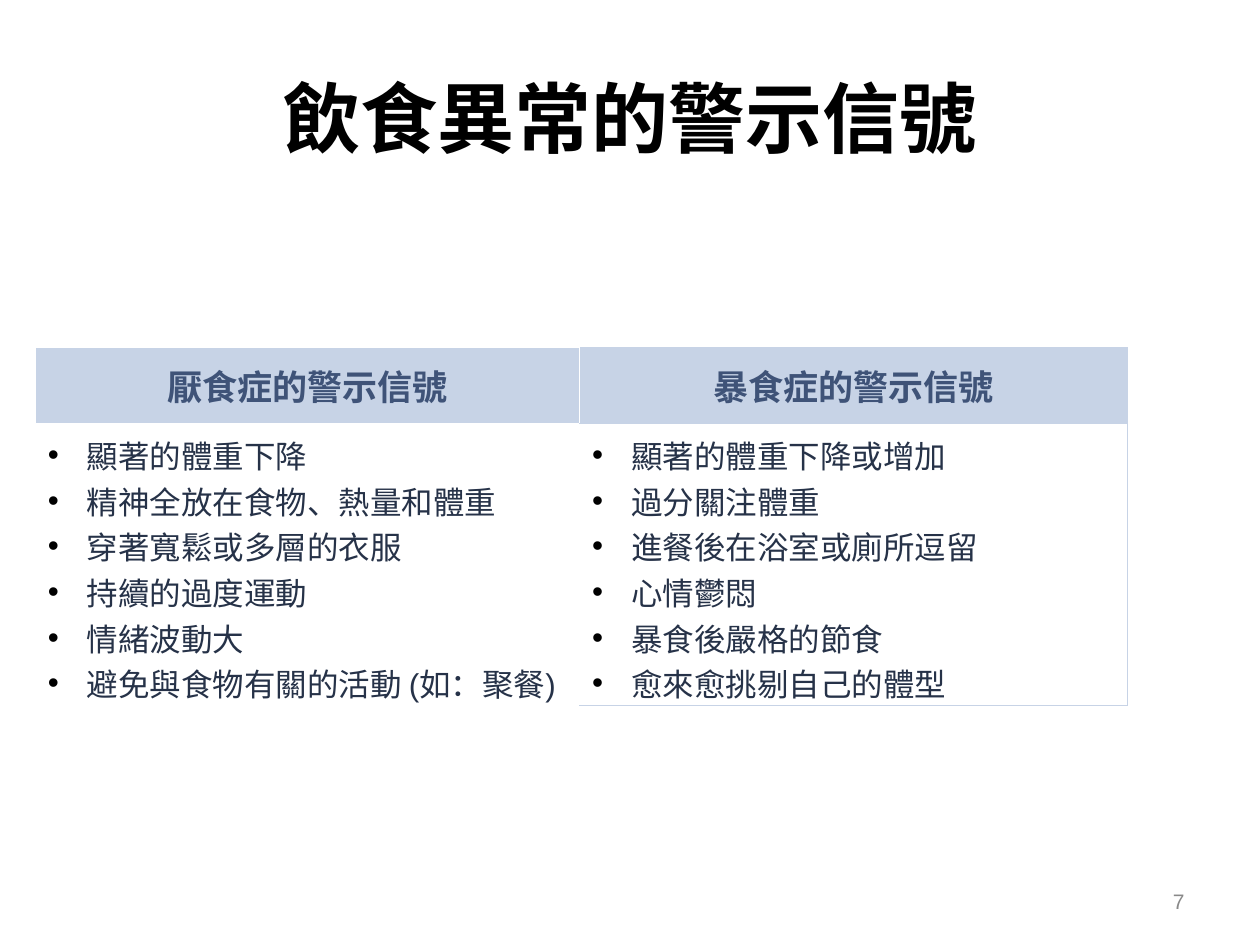
"""Build a slide that compares the warning signs of two eating disorders."""
from lxml.etree import SubElement as Sub
from pptx import Presentation
from pptx.dml.color import RGBColor as RGB
from pptx.enum.text import MSO_ANCHOR as Anchor, PP_ALIGN as Align
from pptx.oxml.ns import qn
from pptx.util import Pt

SCALE = 9144
FONT = "Arial"
HUES = {"black": "000000", "gray": "898989", "white": "FFFFFF",
        "band": "C7D3E6", "head": "3F5378", "body": "263248"}
SIGNS = {
    "厭食症的警示信號": ["顯著的體重下降", "精神全放在食物、熱量和體重", "穿著寬鬆或多層的衣服",
                 "持續的過度運動", "情緒波動大", "避免與食物有關的活動 (如：聚餐)"],
    "暴食症的警示信號": ["顯著的體重下降或增加", "過分關注體重", "進餐後在浴室或廁所逗留",
                 "心情鬱悶", "暴食後嚴格的節食", "愈來愈挑剔自己的體型"],
}


def px(n):
    return n * SCALE


class Deck:
    def __init__(self, wide, high):
        self.prs = Presentation()
        self.prs.slide_width, self.prs.slide_height = px(wide), px(high)
        self.slide = self.prs.slides.add_slide(self.prs.slide_layouts[6])

    def style(self, para, size, hue, bold=False, align=Align.LEFT):
        para.alignment = align
        for run in para.runs:
            font = run.font
            font.name, font.size, font.bold = FONT, Pt(size), bold
            font.color.rgb = RGB.from_string(HUES[hue])

    def text(self, box, words, *look):
        frame = self.slide.shapes.add_textbox(*map(px, box)).text_frame
        frame.word_wrap = True
        frame.vertical_anchor = Anchor.MIDDLE
        frame.text = words
        self.style(frame.paragraphs[0], *look)

    def bullet(self, para):
        props = para._p.get_or_add_pPr()
        props.set("marL", str(px(31)))
        props.set("indent", str(px(-31)))
        Sub(Sub(props, qn("a:buClr")), qn("a:srgbClr"), val=HUES["black"])
        Sub(props, qn("a:buFont"), typeface=FONT)
        Sub(props, qn("a:buChar"), char="•")

    def border(self, cell, hues):
        props = cell._tc.get_or_add_tcPr()
        for spot, (side, hue) in enumerate(zip("LRTB", hues)):
            line = Sub(props, qn("a:ln" + side), w=str(Pt(0.75)))
            Sub(Sub(line, qn("a:solidFill")), qn("a:srgbClr"), val=HUES[hue])
            props.insert(spot, line)

    def cell(self, cell, lines, hues, head):
        cell.vertical_anchor = Anchor.MIDDLE
        cell.margin_left = cell.margin_right = px(10)
        cell.margin_top = cell.margin_bottom = px(7)
        if head:
            cell.fill.solid()
            cell.fill.fore_color.rgb = RGB.from_string(HUES["band"])
        else:
            cell.fill.background()
        self.border(cell, hues)
        cell.text_frame.text = "\n".join(lines)
        for para in cell.text_frame.paragraphs:
            if head:
                self.style(para, 20, "head", True, Align.CENTER)
            else:
                self.bullet(para)
                self.style(para, 18, "body")

    def table(self, left, top, cols, rows, data):
        grid = self.slide.shapes.add_table(
            len(rows), len(cols), px(left), px(top), px(sum(cols)), px(sum(rows))).table
        grid.first_row = grid.horz_banding = False
        for row, high in zip(grid.rows, rows):
            row.height = px(high)
        edges = [["white"] * 4, ["white"] + ["band"] * 3]
        for i, (title, signs) in enumerate(data.items()):
            grid.columns[i].width = px(cols[i])
            self.cell(grid.cell(0, i), [title], edges[i], True)
            self.cell(grid.cell(1, i), signs, edges[i], False)


def main():
    deck = Deck(1000, 750)
    deck.text((50, 30, 900, 125), "飲食異常的警示信號", 44, "black", True, Align.CENTER)
    deck.text((717, 695, 233, 40), "7", 12, "gray", False, Align.RIGHT)
    deck.table(28, 276, (432, 435), (60, 223), SIGNS)
    deck.prs.save("out.pptx")


if __name__ == "__main__":
    main()
